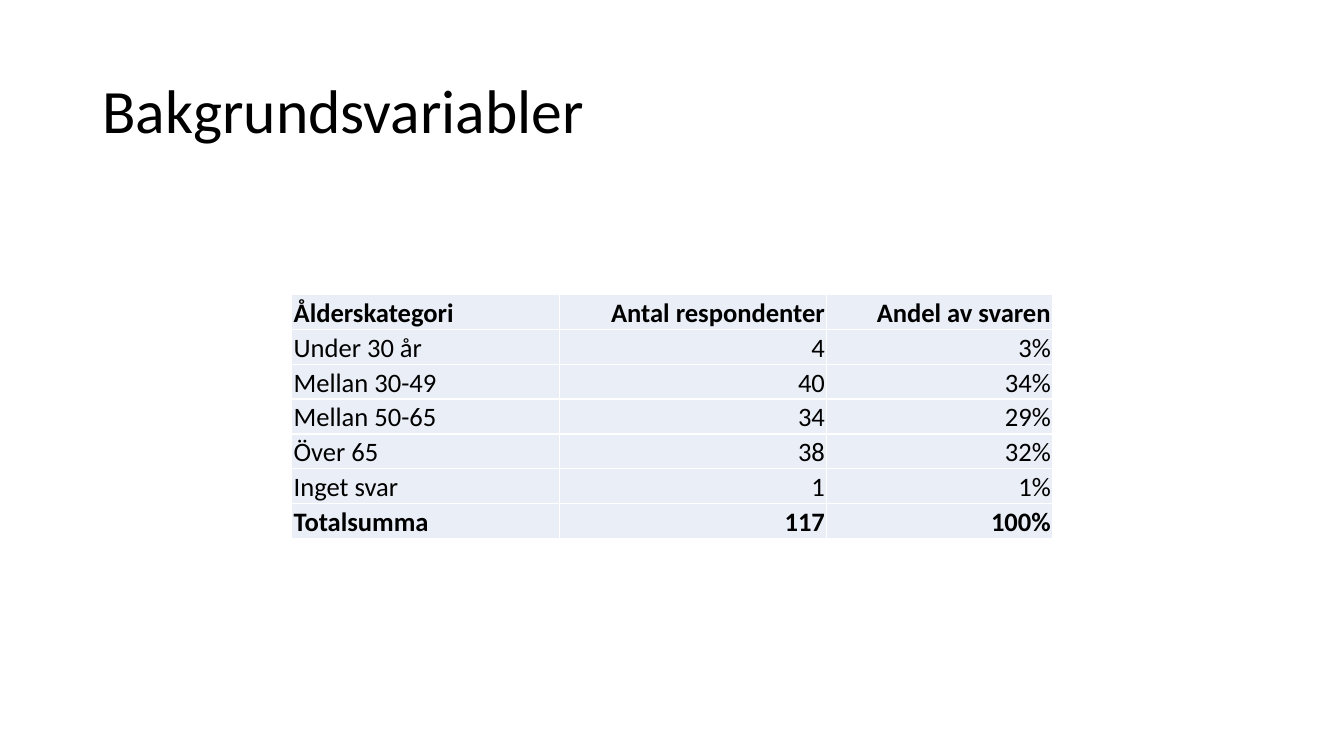
from dataclasses import dataclass

from lxml import etree
from pptx import Presentation
from pptx.dml.color import RGBColor
from pptx.enum.text import MSO_ANCHOR, PP_ALIGN
from pptx.oxml.ns import qn
from pptx.slide import Slide
from pptx.table import _Cell
from pptx.text.text import _Paragraph
from pptx.util import Pt

LEFT, RIGHT = PP_ALIGN.LEFT, PP_ALIGN.RIGHT
MIDDLE, BOTTOM = MSO_ANCHOR.MIDDLE, MSO_ANCHOR.BOTTOM
TITLE_ONLY = 5

COLOURS = {"text": "000000", "cell": "EAEFF7", "border": "FFFFFF"}
FONT = "Calibri"
TITLE_FRAME = {"left": Pt(66), "top": Pt(28.8), "width": Pt(828), "height": Pt(104.4)}
TABLE_LEFT, TABLE_TOP = Pt(208.4), Pt(210.4)
ROW_HEIGHT = Pt(24.9)
BORDER_WIDTH = Pt(1)
CELL_FORMAT = {
    "margin_left": Pt(1.4),
    "margin_right": Pt(1.4),
    "margin_top": Pt(1.4),
    "margin_bottom": Pt(0),
    "vertical_anchor": BOTTOM,
}


@dataclass(frozen=True)
class Column:
    heading: str
    width: float
    alignment: PP_ALIGN


@dataclass(frozen=True)
class AgeGroup:
    name: str
    respondents: str
    share: str
    bold: bool = False


COLUMNS = (
    Column("Ålderskategori", 191.4, LEFT),
    Column("Antal respondenter", 190.8, RIGHT),
    Column("Andel av svaren", 161.3, RIGHT),
)
ROWS = (
    AgeGroup(*(column.heading for column in COLUMNS), bold=True),
    AgeGroup("Under 30 år", "4", "3%"),
    AgeGroup("Mellan 30-49", "40", "34%"),
    AgeGroup("Mellan 50-65", "34", "29%"),
    AgeGroup("Över 65", "38", "32%"),
    AgeGroup("Inget svar", "1", "1%"),
    AgeGroup("Totalsumma", "117", "100%", bold=True),
)


def write(para: _Paragraph, text: str, size: float, bold: bool, alignment: PP_ALIGN) -> None:
    para.alignment = alignment
    span = para.add_run()
    span.text = text
    for name, value in {"name": FONT, "size": Pt(size), "bold": bold}.items():
        setattr(span.font, name, value)
    span.font.color.rgb = RGBColor.from_string(COLOURS["text"])


def add_borders(cell: _Cell) -> None:
    """Line all four sides; call before filling, as the schema puts lines first."""
    properties = cell._tc.get_or_add_tcPr()
    for side in ("lnL", "lnR", "lnT", "lnB"):
        line = etree.SubElement(properties, qn(f"a:{side}"), w=str(BORDER_WIDTH))
        fill = etree.SubElement(line, qn("a:solidFill"))
        etree.SubElement(fill, qn("a:srgbClr"), val=COLOURS["border"])


def add_title(page: Slide, text: str) -> None:
    title = page.shapes.title
    for name, value in TITLE_FRAME.items():
        setattr(title, name, value)
    title.text_frame.vertical_anchor = MIDDLE
    para = title.text_frame.paragraphs[0]
    para.line_spacing = 0.9
    write(para, text, 44, False, LEFT)


def add_age_table(page: Slide) -> None:
    width = Pt(sum(column.width for column in COLUMNS))
    table = page.shapes.add_table(
        len(ROWS), len(COLUMNS), TABLE_LEFT, TABLE_TOP, width, ROW_HEIGHT * len(ROWS)
    ).table
    table.first_row = table.horz_banding = False
    for index, column in enumerate(COLUMNS):
        table.columns[index].width = Pt(column.width)
    for row_index, group in enumerate(ROWS):
        table.rows[row_index].height = ROW_HEIGHT
        texts = (group.name, group.respondents, group.share)
        for column_index, (column, text) in enumerate(zip(COLUMNS, texts)):
            cell = table.cell(row_index, column_index)
            for name, value in CELL_FORMAT.items():
                setattr(cell, name, value)
            add_borders(cell)
            cell.fill.solid()
            cell.fill.fore_color.rgb = RGBColor.from_string(COLOURS["cell"])
            write(cell.text_frame.paragraphs[0], text, 19, group.bold, column.alignment)


def main() -> None:
    deck = Presentation()
    deck.slide_width, deck.slide_height = Pt(960), Pt(540)
    page = deck.slides.add_slide(deck.slide_layouts[TITLE_ONLY])
    add_title(page, "Bakgrundsvariabler")
    add_age_table(page)
    deck.save("out.pptx")


if __name__ == "__main__":
    main()
